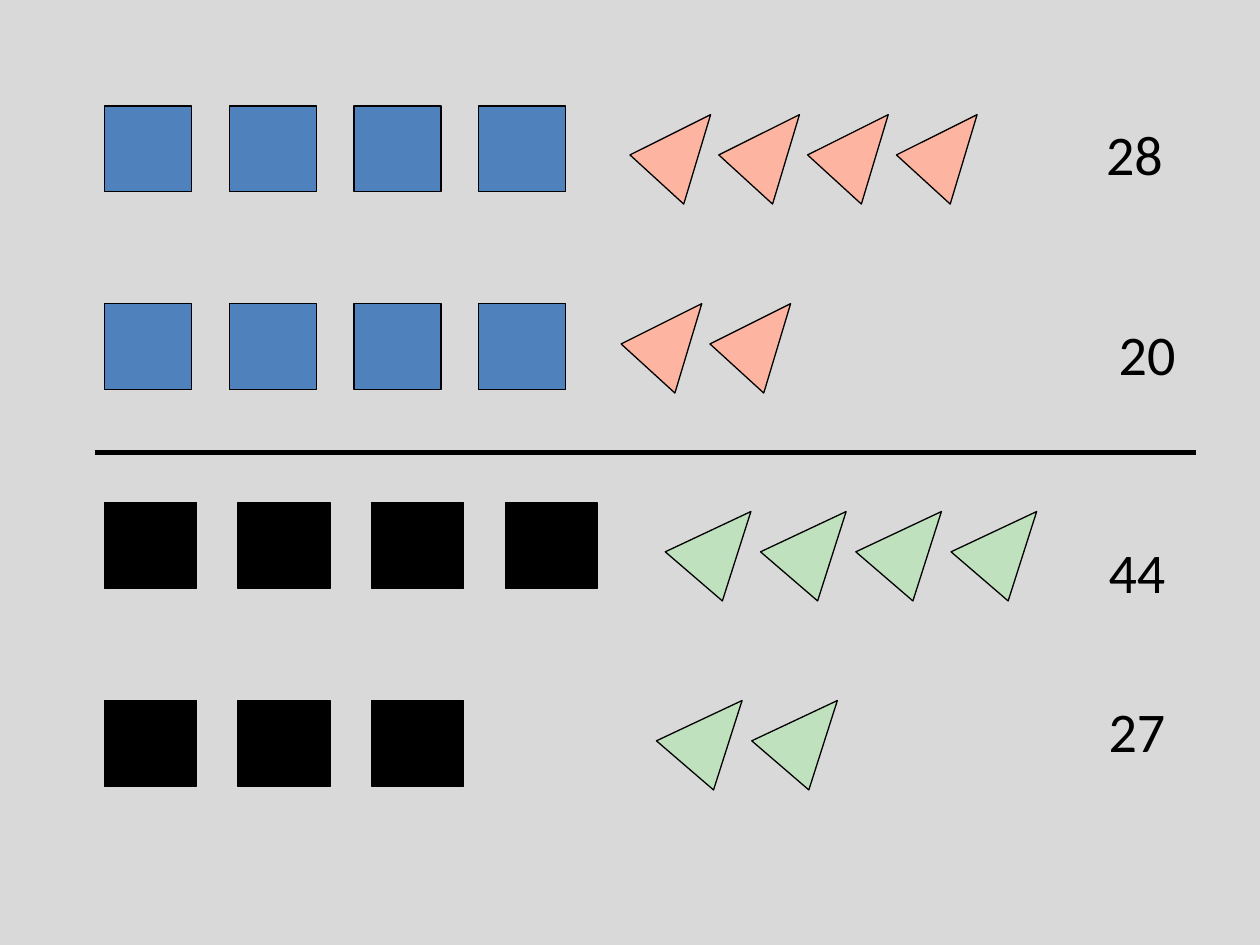
from lxml.etree import SubElement
from pptx import Presentation
from pptx.dml.color import RGBColor
from pptx.enum.shapes import MSO_CONNECTOR, MSO_SHAPE
from pptx.enum.text import MSO_AUTO_SIZE
from pptx.oxml.ns import qn
from pptx.util import Inches, Pt

COLORS = {
    "back": "D9D9D9",
    "ink": "000000",
    "blue": "4F81BD",
    "pink": "FDB5A1",
    "green": "C0E1BD",
}


class Board:
    def __init__(self, slide, font="Calibri", size=32):
        self.slide = slide
        self.font = font
        self.size = size
        fill = slide.background.fill
        fill.solid()
        fill.fore_color.rgb = self.color("back")

    def color(self, name):
        return RGBColor.from_string(COLORS[name])

    def paint(self, shape, fill):
        shape.shadow.inherit = False
        shape.fill.solid()
        shape.fill.fore_color.rgb = self.color(fill)
        shape.line.color.rgb = self.color("ink")
        shape.line.width = Pt(0.75)

    def group(self):
        return self.slide.shapes.add_group_shape().shapes

    def square(self, group, x, y, width, fill):
        box = group.add_shape(MSO_SHAPE.RECTANGLE, Inches(x), Inches(y),
                              Inches(width), Inches(0.68))
        self.paint(box, fill)

    def triangle(self, group, x, y, width, fill):
        """Draw a tilted triangle: left corner, top right tip, bottom tip."""
        pen = group.build_freeform(Inches(x), Inches(y + 0.32))
        pen.add_line_segments([
            (Inches(x + width), Inches(y)),
            (Inches(x + width * 2 / 3), Inches(y + 0.71)),
        ], close=True)
        self.paint(pen.convert_to_shape(), fill)

    def row(self, draw, group, count, x, y, width, step, fill):
        for i in range(count):
            draw(group, x + i * step, y, width, fill)

    def text(self, words, x, y, width=0.69, height=0.63, color="ink"):
        box = self.slide.shapes.add_textbox(Inches(x), Inches(y),
                                            Inches(width), Inches(height))
        frame = box.text_frame
        frame.word_wrap = False
        frame.auto_size = MSO_AUTO_SIZE.SHAPE_TO_FIT_TEXT
        run = frame.paragraphs[0].add_run()
        run.text = words
        run.font.name = self.font
        run.font.size = Pt(self.size)
        run.font.color.rgb = self.color(color)

    def rule(self, left, right, y):
        line = self.slide.shapes.add_connector(
            MSO_CONNECTOR.STRAIGHT, Inches(left), Inches(y),
            Inches(right), Inches(y))
        line.line.color.rgb = self.color("ink")
        line.line.width = Pt(3)
        SubElement(line._element.spPr, qn("a:effectLst"))


def main():
    deck = Presentation()
    deck.slide_width, deck.slide_height = Inches(10), Inches(7.5)
    board = Board(deck.slides.add_slide(deck.slide_layouts[6]))

    # Per set: top, (fill, width, step) of squares and of triangles,
    # then (squares, triangles, triangle left) for its two rows
    sets = [
        (0.84, ("blue", 0.69, 0.99), ("pink", 0.64, 0.705),
         [(4, 4, 5), (4, 2, 4.93)]),
        (3.99, ("ink", 0.73, 1.06), ("green", 0.68, 0.756),
         [(4, 4, 5.28), (3, 2, 5.21)]),
    ]
    for top, square, triangle, rows in sets:
        group = board.group()
        drops = [(0, 0.07), (1.57, 1.57)]
        for (squares, triangles, left), (low, tip) in zip(rows, drops):
            fill, width, step = triangle
            board.row(board.triangle, group, triangles, left, top + tip,
                      width, step, fill)
            fill, width, step = square
            board.row(board.square, group, squares, 0.83, top + low,
                      width, step, fill)

    totals = [("28", 8.68, 0.9), ("20", 8.78, 2.49),
              ("44", 8.7, 4.22), ("27", 8.7, 5.48)]
    for words, x, y in totals:
        board.text(words, x, y)
    board.rule(0.75, 9.49, 3.59)

    deck.save("out.pptx")


if __name__ == "__main__":
    main()
